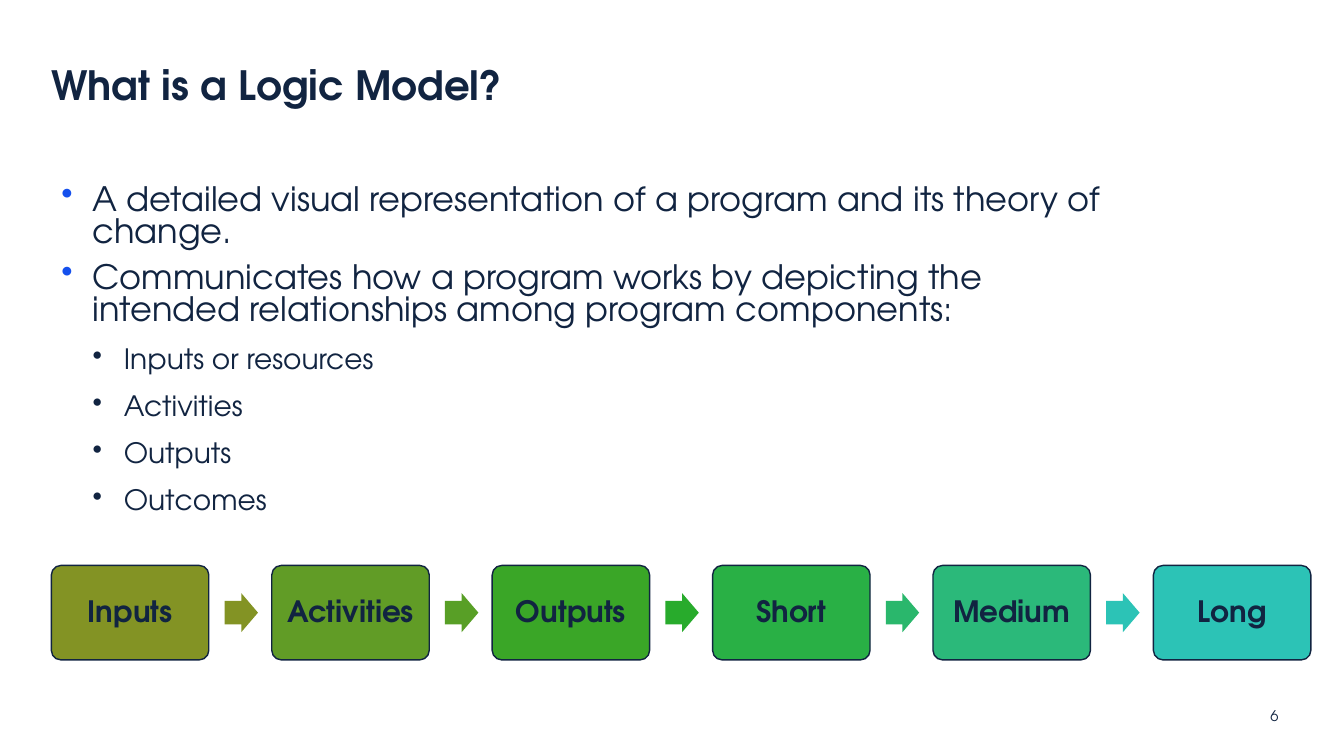
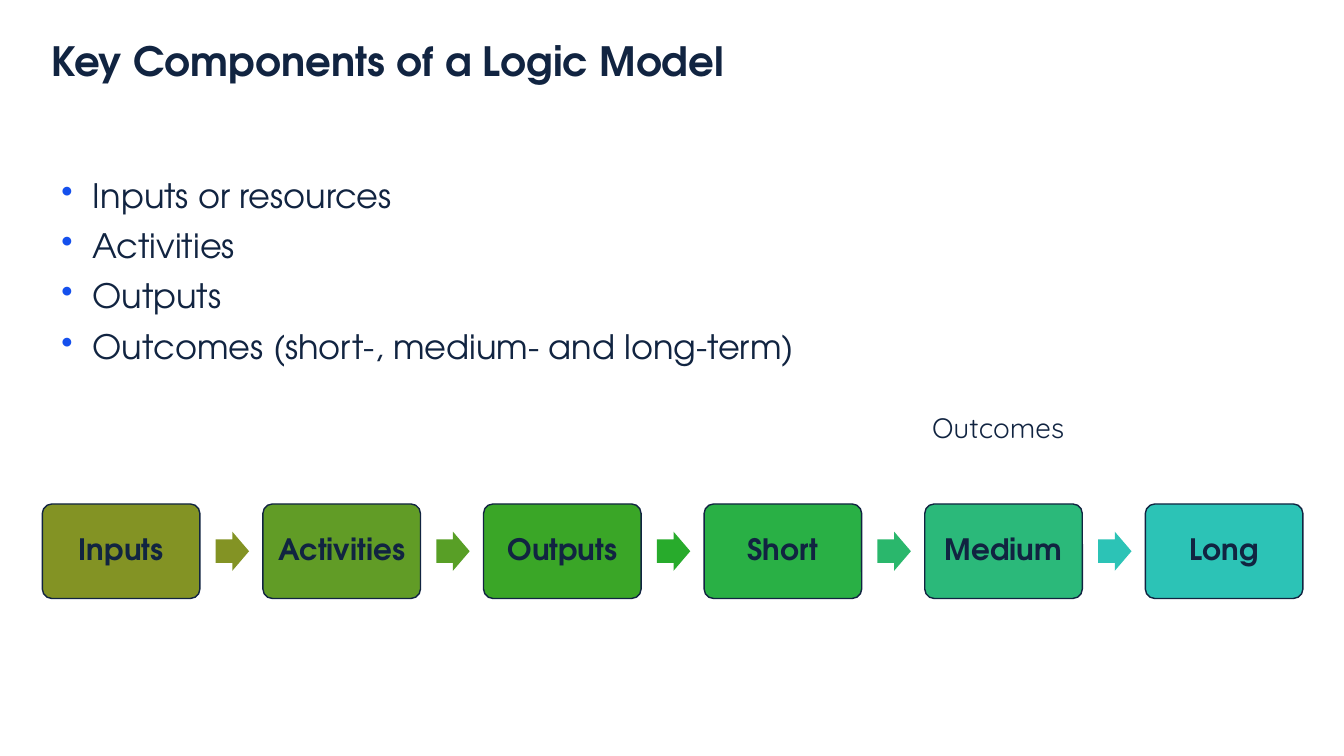
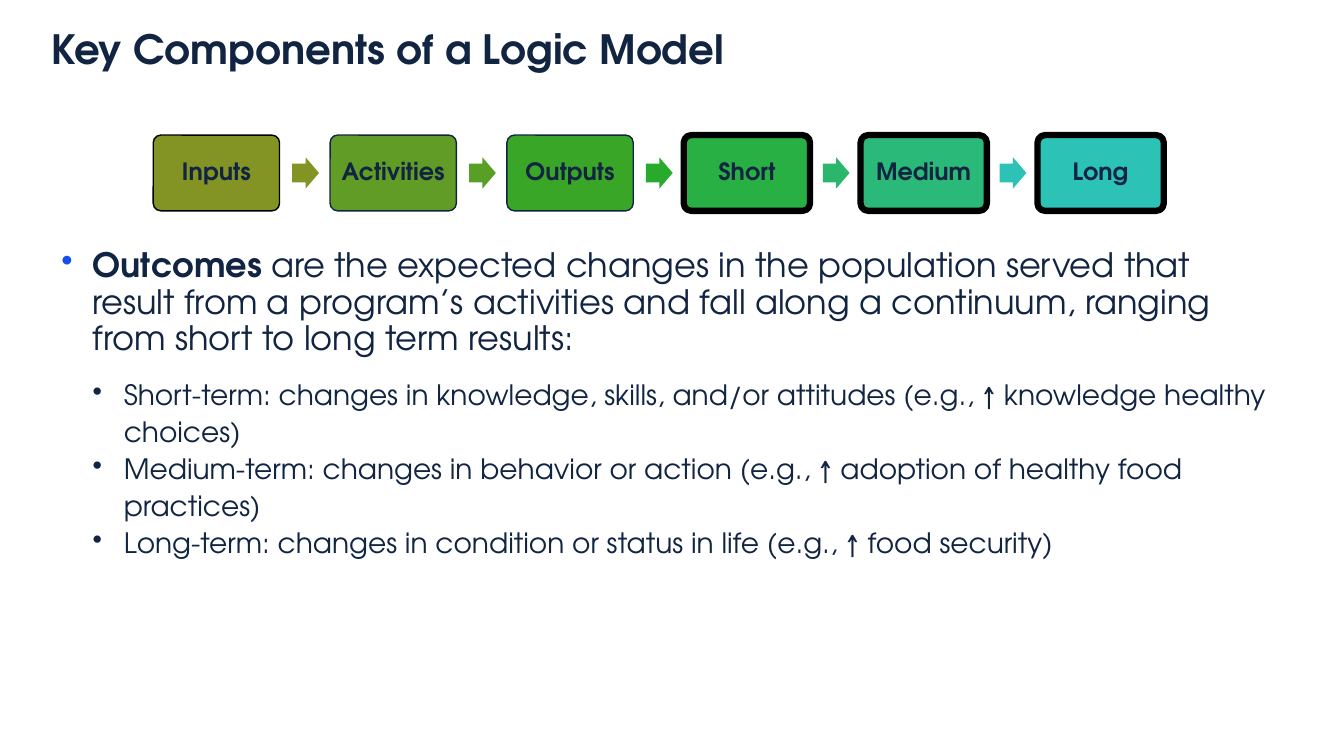
from dataclasses import dataclass
from typing import Optional

from lxml.etree import SubElement
from pptx import Presentation
from pptx.dml.color import RGBColor
from pptx.enum.shapes import MSO_SHAPE as Preset
from pptx.enum.text import MSO_ANCHOR as Anchor, PP_ALIGN as Align
from pptx.oxml.ns import qn
from pptx.util import Emu, Pt

EMU_PER_PX = 9144
NAVY = RGBColor(0x11, 0x24, 0x41)
BLUE = RGBColor(0x15, 0x50, 0xED)
BLACK = RGBColor(0x00, 0x00, 0x00)
OLIVE = RGBColor(0x83, 0x93, 0x24)
MOSS = RGBColor(0x61, 0x9C, 0x26)
LEAF = RGBColor(0x58, 0x9F, 0x26)
GRASS = RGBColor(0x3A, 0xA6, 0x27)
GREEN = RGBColor(0x28, 0xAB, 0x2C)
EMERALD = RGBColor(0x29, 0xB0, 0x45)
JADE = RGBColor(0x2A, 0xB7, 0x6C)
MINT = RGBColor(0x2B, 0xB9, 0x7A)
TEAL = RGBColor(0x2C, 0xC3, 0xB6)
MAIN_FONT = "TeX Gyre Adventor"
LABEL_FONT = "Quicksand"
HANG = 31


@dataclass(frozen=True)
class Stage:
    name: str
    fill: RGBColor
    arrow: Optional[RGBColor] = None


@dataclass(frozen=True)
class Outline:
    color: RGBColor = NAVY
    width: float = 1


@dataclass(frozen=True)
class Flow:
    left: int
    top: int
    span: int
    size: int
    inset: int
    outlines: tuple[Outline, ...]


@dataclass(frozen=True)
class Bullet:
    text: str
    lead: str = ""
    level: int = 0
    spacing: float = 0.9
    before: int = 0
    after: int = 0


STAGES = (
    Stage("Inputs", OLIVE, OLIVE),
    Stage("Activities", MOSS, LEAF),
    Stage("Outputs", GRASS, GREEN),
    Stage("Short", EMERALD, JADE),
    Stage("Medium", MINT, TEAL),
    Stage("Long", TEAL),
)
PLAIN = (Outline(),) * len(STAGES)
OUTCOMES_MARKED = (Outline(BLACK), Outline(), Outline()) + (Outline(BLACK, 4.5),) * 3


def px(value: float) -> Emu:
    return Emu(round(value * EMU_PER_PX))


def set_insets(frame, horizontal: int, vertical: int) -> None:
    frame.margin_left = frame.margin_right = px(horizontal)
    frame.margin_top = frame.margin_bottom = px(vertical)


def style_runs(para, size: float, bold: bool = False, font: str = MAIN_FONT) -> None:
    for span in para.runs:
        span.font.name = font
        span.font.size = Pt(size)
        span.font.bold = bold
        span.font.color.rgb = NAVY


def add_text(page, left: int, top: int, width: int, height: int, text: str = "",
             size: float = 20, bold: bool = False, font: str = MAIN_FONT,
             anchor=Anchor.TOP, insets: tuple[int, int] = (0, 0)):
    box = page.shapes.add_textbox(px(left), px(top), px(width), px(height))
    frame = box.text_frame
    frame.word_wrap = True
    frame.vertical_anchor = anchor
    set_insets(frame, *insets)
    frame.text = text
    style_runs(frame.paragraphs[0], size, bold, font)
    return frame


def add_title(page, text: str, top: int, width: int) -> None:
    frame = add_text(page, 51, top, width, 46, text, 28.8, True, anchor=Anchor.BOTTOM)
    frame.paragraphs[0].line_spacing = 0.9


def add_bullet_mark(para, level: int) -> None:
    properties = para._p.get_or_add_pPr()
    properties.set("marL", str(px(HANG * (level + 1))))
    properties.set("indent", str(px(-HANG)))
    if level == 0:
        color = SubElement(properties, qn("a:buClr"))
        SubElement(color, qn("a:srgbClr")).set("val", str(BLUE))
    SubElement(properties, qn("a:buChar")).set("char", "•")


def add_bullets(page, top: int, width: int, bullets: list[Bullet]) -> None:
    frame = add_text(page, 51, top, width, 350, insets=(10, 5))
    for index, bullet in enumerate(bullets):
        para = frame.add_paragraph() if index else frame.paragraphs[0]
        para.text = bullet.lead + bullet.text if not bullet.lead else bullet.lead
        if bullet.lead:
            para.add_run().text = bullet.text
        para.level = bullet.level
        add_bullet_mark(para, bullet.level)
        para.line_spacing = bullet.spacing
        para.space_before = Pt(bullet.before)
        para.space_after = Pt(bullet.after)
        style_runs(para, 20 if bullet.level else 24)
        para.runs[0].font.bold = bool(bullet.lead)


def add_preset(group, preset, left: float, top: float, width: float, height: float,
               fill: RGBColor, adjustments: tuple[float, ...]):
    shape = group.shapes.add_shape(preset, px(left), px(top), px(width), px(height))
    shape.shadow.inherit = False
    shape.fill.solid()
    shape.fill.fore_color.rgb = fill
    for index, value in enumerate(adjustments):
        shape.adjustments[index] = value
    return shape


def add_flow(page, flow: Flow) -> None:
    group = page.shapes.add_group_shape()
    pitch = flow.span / (len(STAGES) - 1)
    width = pitch / 1.4
    height = width * 0.6
    arrow_height = width * 0.248
    for index, (stage, outline) in enumerate(zip(STAGES, flow.outlines)):
        left = flow.left + index * pitch
        card = add_preset(group, Preset.ROUNDED_RECTANGLE, left, flow.top,
                          width, height, stage.fill, (0.1,))
        card.line.color.rgb = outline.color
        card.line.width = Pt(outline.width)
        frame = card.text_frame
        frame.word_wrap = True
        frame.vertical_anchor = Anchor.MIDDLE
        set_insets(frame, flow.inset, flow.inset)
        frame.text = stage.name
        para = frame.paragraphs[0]
        para.alignment = Align.CENTER
        para.line_spacing = 0.9
        style_runs(para, flow.size, True)
        if stage.arrow is not None:
            arrow = add_preset(group, Preset.RIGHT_ARROW, left + width * 1.1,
                               flow.top + (height - arrow_height) / 2,
                               width * 0.212, arrow_height, stage.arrow, (0.6, 0.5))
            arrow.line.fill.background()


def build_definition(page) -> None:
    add_bullets(page, 179, 1058, [
        Bullet("A detailed visual representation of a program and its theory of change.",
               spacing=0.8),
        Bullet("Communicates how a program works by depicting the intended "
               "relationships among program components:", spacing=0.8, before=10),
        *(Bullet(text, level=1, spacing=1.4)
          for text in ("Inputs or resources", "Activities", "Outputs", "Outcomes")),
    ])
    add_title(page, "What is a Logic Model?", 62, 665)
    add_text(page, 1260, 702, 32, 15, "6", 10.5, anchor=Anchor.MIDDLE)
    add_flow(page, Flow(51, 561, 1093, 21, 9, PLAIN))


def build_components(page) -> None:
    add_bullets(page, 173, 1058, [
        Bullet("Inputs or resources"),
        *(Bullet(text, before=10) for text in (
            "Activities", "Outputs", "Outcomes (short-, medium- and long-term)")),
    ])
    add_title(page, "Key Components of a Logic Model", 39, 879)
    label = add_text(page, 800, 402, 380, 44, "Outcomes", 20, font=LABEL_FONT,
                     insets=(10, 5))
    label.paragraphs[0].alignment = Align.CENTER
    add_flow(page, Flow(42, 500, 1094, 21, 9, PLAIN))


def build_outcomes(page) -> None:
    add_bullets(page, 242, 1224, [
        Bullet("are the expected changes in the population served that result from a "
               "program’s activities and fall along a continuum, ranging from short "
               "to long term results:", lead="Outcomes ", after=12),
        *(Bullet(text, level=1, spacing=1.1) for text in (
            "Short-term: changes in knowledge, skills, and/or attitudes "
            "(e.g., ↑ knowledge healthy choices)",
            "Medium-term: changes in behavior or action "
            "(e.g., ↑ adoption of healthy food practices)",
            "Long-term: changes in condition or status in life (e.g., ↑ food security)",
        )),
    ])
    add_title(page, "Key Components of a Logic Model", 27, 923)
    add_flow(page, Flow(152, 134, 877, 17, 7, OUTCOMES_MARKED))


def main() -> None:
    deck = Presentation()
    deck.slide_width = px(1333)
    deck.slide_height = px(750)
    for build in (build_definition, build_components, build_outcomes):
        build(deck.slides.add_slide(deck.slide_layouts[6]))
    deck.save("out.pptx")


if __name__ == "__main__":
    main()
